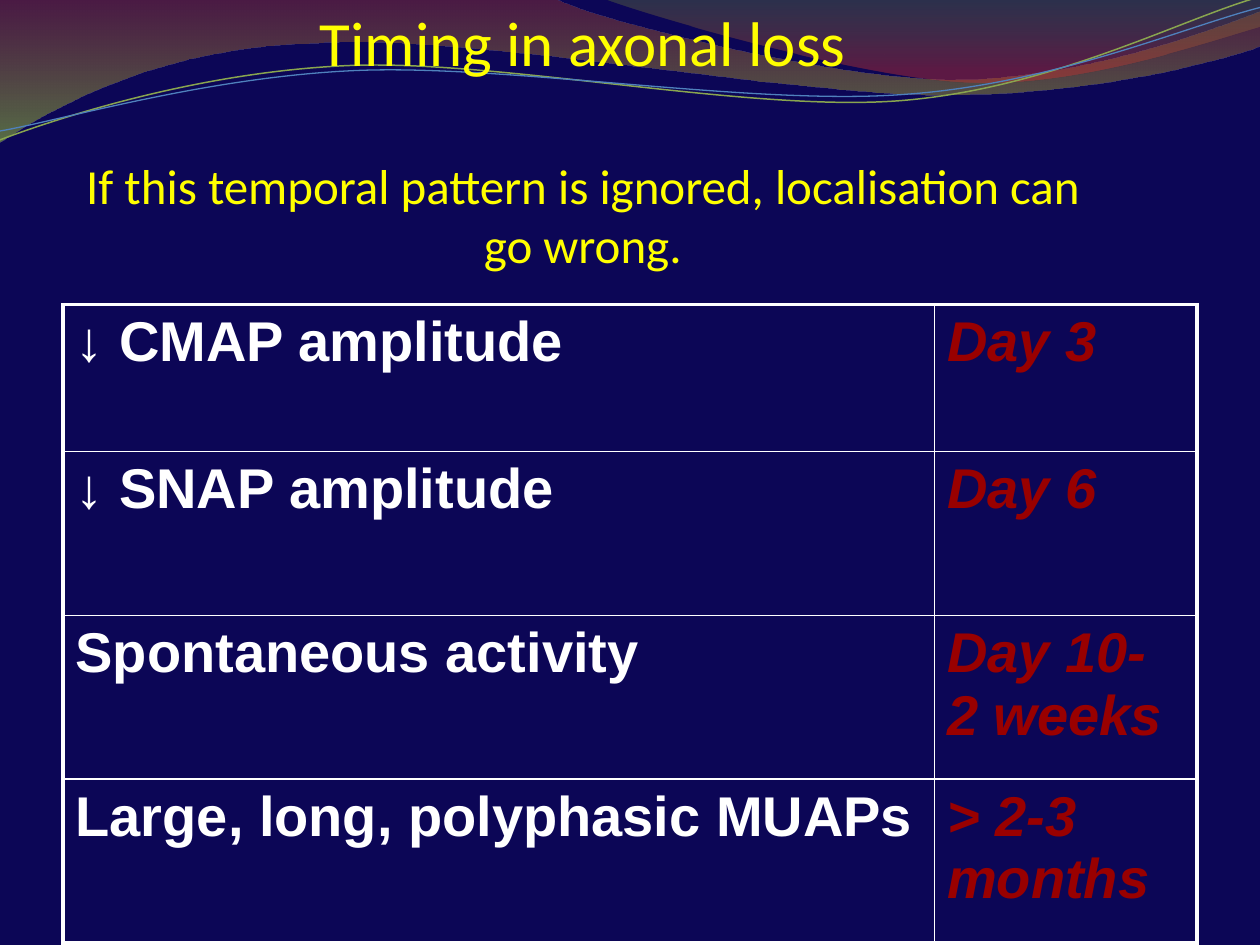
import math

from lxml import etree
from pptx import Presentation
from pptx import util as u
from pptx.dml.color import RGBColor
from pptx.enum import text
from pptx.oxml import ns

rgb = RGBColor.from_string


def draw_wave(points, pattern, closed):
    """Add an outline in inches; pattern has L (one point) or C (three points) for each segment."""
    emu = [(u.Inches(x), u.Inches(y)) for x, y in points]
    builder = slide.shapes.build_freeform(*emu[0])
    builder.add_line_segments(emu[1:], close=closed)
    wave = builder.convert_to_shape()
    wave.shadow.inherit = False
    segments = iter(list(wave._element.iter(ns.qn("a:lnTo"))))
    for kind in pattern:
        segment = next(segments)
        if kind == "C":
            segment.tag = ns.qn("a:cubicBezTo")
            for _ in range(2):
                extra = next(segments)
                segment.append(extra[0])
                extra.getparent().remove(extra)
    return wave


def style(run, font, size, color, bold=False, italic=False):
    run.font.name, run.font.size = font, u.Pt(size)
    run.font.bold, run.font.italic = bold, italic
    run.font.color.rgb = rgb(color)


prs = Presentation()
prs.slide_width, prs.slide_height = u.Inches(10), u.Inches(7.5)
slide = prs.slides.add_slide(prs.slide_layouts[6])
slide.background.fill.solid()
slide.background.fill.fore_color.rgb = rgb("0C0656")

# Translucent bands: points, segment kinds, gradient stops (position, colour, opacity %)
bands = [
    ([(0, 0), (4.4, -0.01),
      (4.76, 0.17), (6.64, 0.63), (7.58, 0.63),
      (8.53, 0.63), (9.58, 0.26), (10, 0.09), (10.01, 0.36),
      (9.83, 0.44), (8.7, 0.76), (7.46, 0.75),
      (6.22, 0.75), (3.82, 0.28), (2.57, 0.34),
      (1.29, 0.36), (0.46, 0.83), (-0.01, 1.13), (0, 0)],
     "LCCLCCCL", [(0, "973330", 45), (1, "95C238", 55)]),
    ([(4.79, -0.01),
      (5.09, 0.11), (6.82, 0.62), (7.69, 0.65),
      (8.56, 0.69), (9.61, 0.32), (10, 0.21), (10, 0), (4.79, -0.01)],
     "CCLL", [(0, "769537", 30), (0.8, "BE3330", 45)]),
]
for points, pattern, stops in bands:
    band = draw_wave(points, pattern, True)
    band.line.fill.background()
    band.fill.gradient()
    band.fill.gradient_angle = 270
    for stop, (position, color, opacity) in zip(band.fill.gradient_stops, stops):
        stop.position = position
        stop.color.rgb = rgb(color)
    colors = band.fill._xPr.iter(ns.qn("a:srgbClr"))
    for node, (_, _, opacity) in zip(list(colors), stops):
        etree.SubElement(node, ns.qn("a:alpha"), val=str(opacity * 1000))

# Thin lines, tilted about their centres: centre, points as they appear, colour, width
TILT = 2.7
sin, cos = math.sin(math.radians(TILT)), math.cos(math.radians(TILT))
threads = [
    ((4.99, 0.57), [(0, 1.11), (0.48, 0.93), (1.58, 0.57), (2.77, 0.52),
                    (3.95, 0.47), (5.93, 0.89), (7.13, 0.8),
                    (8.33, 0.71), (9.38, 0.15), (9.98, -0.02)], "89A54F", 0.85),
    ((5, 0.59), [(0, 1.04), (0.47, 0.96), (1.64, 0.61), (2.83, 0.56),
                 (4.03, 0.51), (5.97, 0.84), (7.17, 0.75),
                 (8.36, 0.67), (9.41, 0.21), (10, 0.06)], "4F81BD", 0.75),
]
for (cx, cy), points, color, width in threads:
    level = [(cx + (x - cx) * cos - (y - cy) * sin, cy + (x - cx) * sin + (y - cy) * cos)
             for x, y in points]
    thread = draw_wave(level, "CCC", False)
    thread.rotation = 360 - TILT
    thread.fill.background()
    thread.line.color.rgb = rgb(color)
    thread.line.width = u.Pt(width)

# Heading and subheading
heading = slide.shapes.add_textbox(u.Inches(0.5), 0, u.Inches(8.25), u.Inches(2.17)).text_frame
heading.word_wrap = True
heading.vertical_anchor = text.MSO_ANCHOR.BOTTOM
heading.margin_left = heading.margin_right = heading.margin_bottom = 0
heading.text = ("Timing in axonal loss\n"
                "If this temporal pattern is ignored, localisation can go wrong.")
for paragraph, size, gap in zip(heading.paragraphs, (36, 28), (0, 44)):
    paragraph.alignment = text.PP_ALIGN.CENTER
    paragraph.space_before = u.Pt(gap)
    style(paragraph.runs[0], "Calibri", size, "FFFF00")

# Findings and when they appear
findings = [
    ("↓ CMAP amplitude", "Day 3"),
    ("↓ SNAP amplitude", "Day 6"),
    ("Spontaneous activity", "Day 10- 2 weeks"),
    ("Large, long, polyphasic MUAPs", "> 2-3 months"),
]
row_heights = [84, 93.6, 93.6, 93.6]
timing = slide.shapes.add_table(len(findings), 2, u.Pt(36), u.Pt(174),
                                u.Pt(648), u.Pt(sum(row_heights))).table
timing.first_row = timing.horz_banding = False
for column, width in zip(timing.columns, (498, 150)):
    column.width = u.Pt(width)
for r, (finding, height) in enumerate(zip(findings, row_heights)):
    timing.rows[r].height = u.Pt(height)
    for c, words in enumerate(finding):
        cell = timing.cell(r, c)
        cell.text_frame.text = words
        style(cell.text_frame.paragraphs[0].runs[0], "Arial", 32,
              ("FFFFFF", "990000")[c], bold=True, italic=c == 1)
        outer = {"L": c == 0, "R": c == 1, "T": r == 0, "B": r == len(findings) - 1}
        for side, is_outer in outer.items():
            border = etree.SubElement(cell._tc.get_or_add_tcPr(), ns.qn(f"a:ln{side}"),
                                      w=str(u.Pt(2.25 if is_outer else 1)))
            fill = etree.SubElement(border, ns.qn("a:solidFill"))
            etree.SubElement(fill, ns.qn("a:srgbClr"), val="FFFFFF")
        cell.fill.background()

prs.save("out.pptx")
